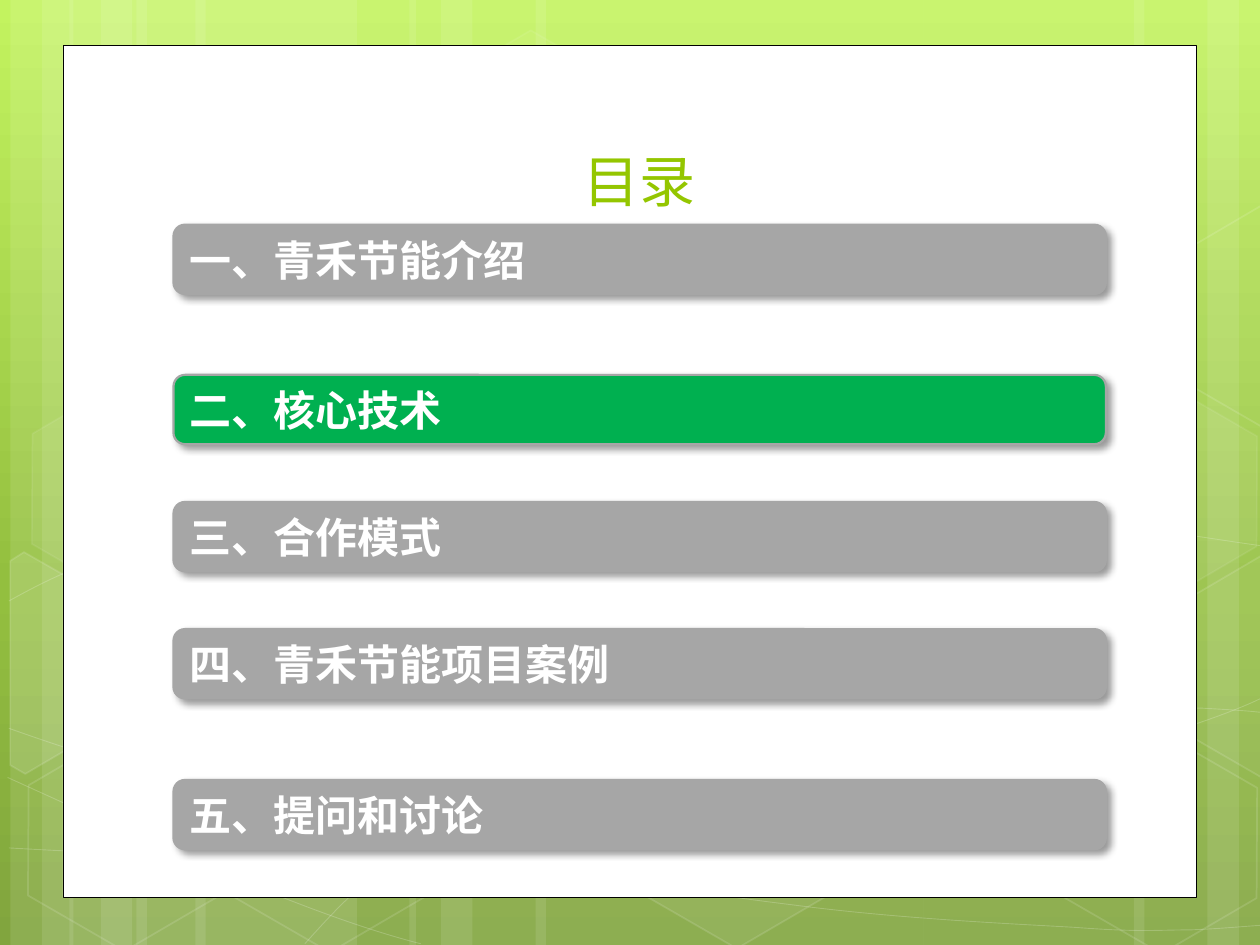
from copy import deepcopy
from dataclasses import dataclass
from math import cos, radians, sin
from lxml.etree import SubElement
from pptx import Presentation
from pptx.dml.color import RGBColor
from pptx.enum.shapes import MSO_SHAPE
from pptx.enum.text import MSO_ANCHOR, PP_ALIGN
from pptx.oxml.ns import qn
from pptx.util import Inches, Pt


@dataclass(frozen=True)
class Theme:
    white: str = "FFFFFF"
    black: str = "000000"
    gray: str = "A6A6A6"
    green: str = "00B050"
    lime: str = "94C600"
    sky: tuple = ((0, "C3F35F"), (0.62, "93BF3F"), (1, "81A53E"))
    font: str = "Noto Sans CJK SC"
    head: int = 32
    item: int = 24
    tilt: int = 30


def apply(target, values):
    for key, value in values.items():
        setattr(target, key, value)


def tint(color, code, alpha=100):
    color.rgb = RGBColor.from_string(code)
    if alpha < 100:
        node = color._xFill.find(qn("a:srgbClr"))
        SubElement(node, qn("a:alpha"), val=str(alpha * 1000))


def turn(points, mid, angle):
    c, s = cos(radians(angle)), sin(radians(angle))
    gaps = [(x - mid[0], y - mid[1]) for x, y in points]
    return [(mid[0] + x * c - y * s, mid[1] + x * s + y * c) for x, y in gaps]


class Deck:
    cols, rows = 100, 75

    def __init__(self, theme):
        self.theme = theme
        self.file = Presentation()
        apply(self.file, {"slide_width": Inches(10), "slide_height": Inches(7.5)})
        self.cell = self.file.slide_width // self.cols
        self.slide = self.file.slides.add_slide(self.file.slide_layouts[6])
        self.shapes = self.slide.shapes

    def size(self, *cells):
        return [round(n * self.cell) for n in cells]

    def sky(self):
        fill = self.slide.background.fill
        fill.gradient()
        fill.gradient_angle = 270
        first = fill.gradient_stops[0]._gs
        first.addnext(deepcopy(first))
        for stop, (place, code) in zip(fill.gradient_stops, self.theme.sky):
            stop.position = place
            tint(stop.color, code)

    def paint(self, shape, fill=None, line=None):
        shape.shadow.inherit = False
        if fill:
            shape.fill.solid()
            tint(shape.fill.fore_color, *fill)
        else:
            shape.fill.background()
        if line:
            width, *ink = line
            shape.line.width = Pt(width)
            tint(shape.line.color, *ink)
        else:
            shape.line.fill.background()
        return shape

    def box(self, kind, place, fill=None, line=None):
        shape = self.shapes.add_shape(kind, *self.size(*place))
        return self.paint(shape, fill, line)

    def hexa(self, left, top, fill, line):
        shape = self.box(MSO_SHAPE.HEXAGON, (left, top, 17.5, 15.2),
                         fill and (self.theme.white, fill), (1, self.theme.white, line))
        shape.rotation = self.theme.tilt
        shape.adjustments[0] = 0.285

    def form(self, points, close):
        start, *rest = [self.size(*point) for point in points]
        form = self.shapes.build_freeform(*start, scale=1.0)
        form.add_line_segments(rest, close=close)
        return form.convert_to_shape()

    def curve(self, points):
        shape = self.form(points, False)
        legs = list(shape._element.iter(qn("a:lnTo")))
        for trio in zip(*[iter(legs)] * 3):
            bend = SubElement(trio[0].getparent(), qn("a:cubicBezTo"))
            for leg in trio:
                bend.append(leg[0])
                leg.getparent().remove(leg)
        self.paint(shape, line=(0.5, self.theme.white, 20))

    def shard(self, points, mid, alpha):
        white, tilt = self.theme.white, self.theme.tilt
        shape = self.form(turn(points, mid, -tilt), True)
        shape.rotation = tilt
        self.paint(shape, alpha and (white, alpha), (1, white, 12))

    def text(self, shape, words, size, color, bold, anchor, align):
        frame = shape.text_frame
        apply(frame, {"word_wrap": True, "vertical_anchor": anchor})
        para = frame.paragraphs[0]
        para.alignment = align
        run = para.add_run()
        run.text = words
        apply(run.font, {"size": Pt(size), "bold": bold, "name": self.theme.font})
        tint(run.font.color, color)
        SubElement(run.font._element, qn("a:ea"), typeface=self.theme.font)

    def bar(self, top, words, color):
        look = self.theme
        shape = self.box(MSO_SHAPE.ROUNDED_RECTANGLE, (13.77, top, 74, 5.5),
                         (color,), (1.25, look.gray))
        glow = SubElement(shape._element.spPr.find(qn("a:effectLst")), qn("a:outerShdw"),
                          blurRad=str(Pt(4)), dist=str(Pt(3)), dir="2700000",
                          algn="tl", rotWithShape="0")
        ink = SubElement(glow, qn("a:srgbClr"), val=look.black)
        SubElement(ink, qn("a:alpha"), val="40000")
        self.text(shape, words, look.item, look.white, True, MSO_ANCHOR.MIDDLE, PP_ALIGN.LEFT)

    def title(self, words):
        look = self.theme
        shape = self.shapes.add_textbox(*self.size(12.35, 4.95, 76.8, 12.5))
        self.text(shape, words, look.head, look.lime, False, MSO_ANCHOR.BOTTOM, PP_ALIGN.CENTER)


BANDS = [(10.83, 0.83, 3.33), (15.5, 5.5, 8), (73.33, 95.83, 90), (42.5, 32.5, 35)]
WIDTHS = (17.5, 5, 8.33)
WIDE = 30.83
CURVES = [
    [(0.7, 67.3), (6.1, 67.6), (11.5, 67.9), (19, 67.8), (26.5, 67.7), (35.8, 67.5),
     (45.8, 66.5), (55.8, 65.5), (70, 63.6), (79.2, 61.7), (88.3, 59.8), (97.7, 56.8),
     (100.7, 55.1)],
    [(0.7, 47.7), (3.6, 46.1), (6.5, 44.6), (12.1, 43.1), (17.8, 41.6), (25.9, 39.4),
     (34.7, 38.7), (43.6, 38), (54.4, 37.9), (65.4, 38.7), (76.4, 39.5), (94.7, 42.6),
     (100.7, 43.4)],
    [(0.6, 61.7), (12.7, 67.2), (24.7, 72.7), (33.4, 74.9)],
    [(0.7, 57.8), (3.8, 58.9), (7, 60), (12.8, 61.6), (18.6, 63.1), (27.3, 65.6),
     (35.7, 67.3), (44, 69), (54.5, 70.8), (62.8, 71.8), (71.1, 72.9), (80, 73.3),
     (85.3, 73.6), (90.5, 74), (91.9, 73.8), (94.5, 73.8), (97.1, 73.7), (98.9, 73.5),
     (100.7, 73.4)],
    [(24.2, 74.9), (26, 72.9), (27.8, 70.9), (30.2, 69.1), (32.6, 67.3), (36, 65.3),
     (38.8, 63.9), (41.6, 62.5), (43.3, 61.9), (47, 60.9), (50.6, 59.9), (57.3, 58.5),
     (60.8, 57.8), (64.4, 57.1), (64.9, 57.1), (68, 56.9), (71.1, 56.6), (76, 56.3),
     (79.4, 56.2), (82.9, 56.1), (88.6, 56.2), (88.6, 56.2), (88.6, 56.2), (95.3, 56.2),
     (95.3, 56.2), (97.1, 56.3), (98.8, 56.4), (99.7, 56.5), (100.6, 56.6), (100.3, 56.5),
     (100.6, 56.6)],
]
HEXES = [(33.4, 3.6, 4, 8), (49.7, 58.9, 6, 12), (1.1, 59.1, 0, 12), (1.4, 31.2, 7, 8),
         (17.4, 59.2, 0, 12), (75.3, 45.3, 10, 12), (83.4, 59.3, 0, 12), (83.4, 31.4, 7, 8)]
LEFT = [(0.8, 44.5), (1.9, 43.8), (9.6, 48.2), (9.5, 57), (2, 61.4), (0.8, 60.7)]
RIGHT = [(92.6, 48.5), (100.1, 44.1), (100.9, 44.6), (100.9, 61.3), (100.2, 61.7), (92.6, 57.3)]
UPPER = [(x, y - 27.8) for x, y in RIGHT]
SHARDS = [(LEFT, (3.6, 53.5), 10), (RIGHT, (98.5, 52), 4), (UPPER, (98.5, 24.1), 0)]
ITEMS = [(17.83, "一、青禾节能介绍"), (29.75, "二、核心技术"), (39.84, "三、合作模式"),
         (49.93, "四、青禾节能项目案例"), (61.9, "五、提问和讨论")]
ACTIVE = 1


def main():
    look = Theme()
    deck = Deck(look)
    deck.sky()
    for band in BANDS:
        for left, width in zip(band, WIDTHS):
            wide = WIDE if left == 42.5 else width
            deck.box(MSO_SHAPE.RECTANGLE, (left, 0, wide, deck.rows), (look.white, 10))
    for points in CURVES:
        deck.curve(points)
    for spot in HEXES:
        deck.hexa(*spot)
    for shard in SHARDS:
        deck.shard(*shard)
    deck.box(MSO_SHAPE.RECTANGLE, (5, 3.6, 90, 67.65), (look.white,), (0.5, look.black))
    for n, (top, words) in enumerate(ITEMS):
        deck.bar(top, words, look.green if n == ACTIVE else look.gray)
    deck.title("目录")
    deck.file.save("out.pptx")


if __name__ == "__main__":
    main()
